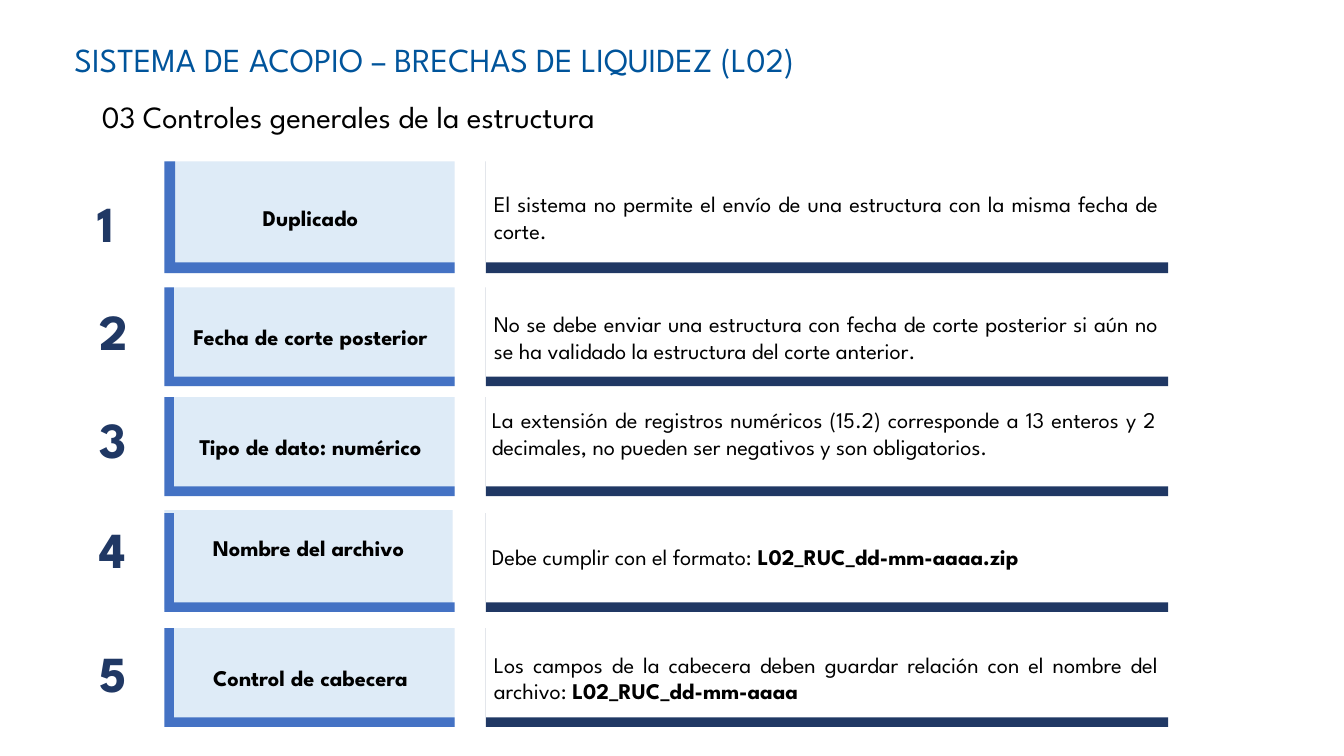
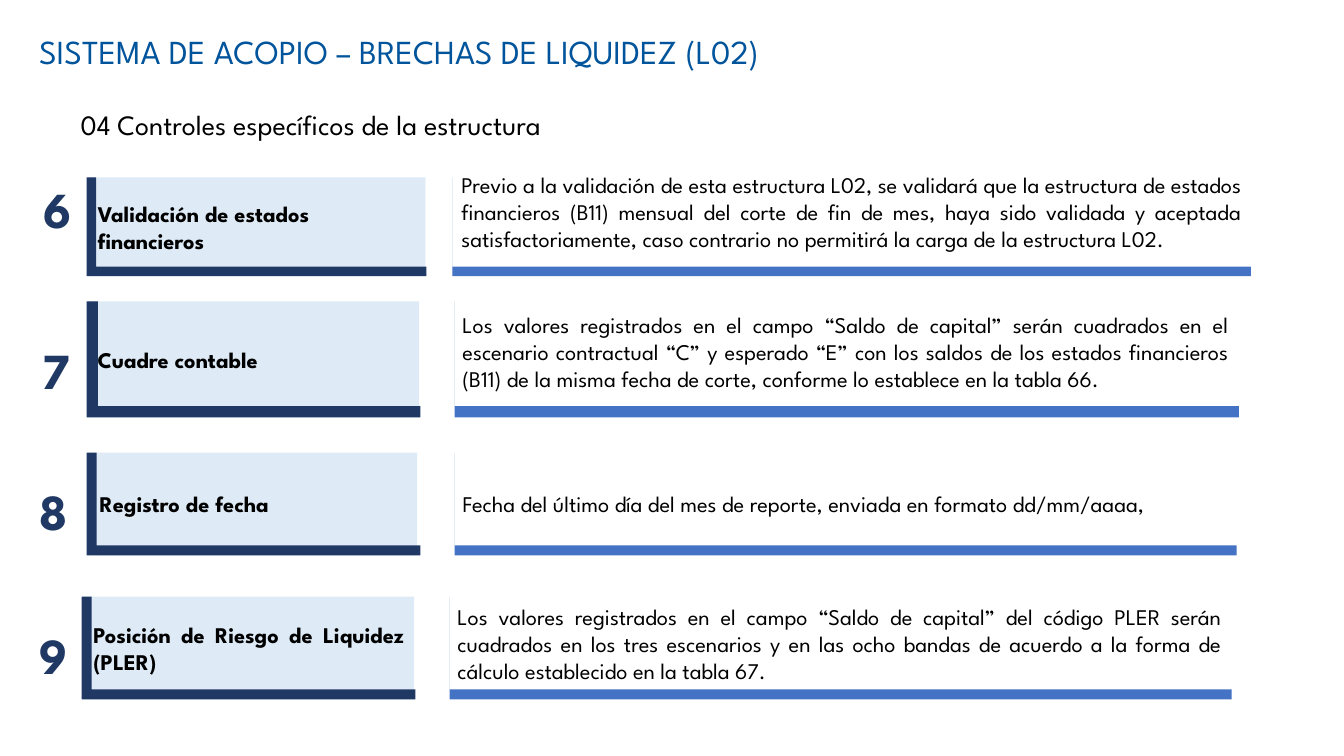
"""Build two slides on the controls of the liquidity gap structure."""
import dataclasses

import pptx
import pptx.dml.color
import pptx.enum.shapes
import pptx.enum.text
import pptx.util

Pt = pptx.util.Pt
Kind = pptx.enum.shapes.MSO_SHAPE
Align = pptx.enum.text.PP_ALIGN
Anchor = pptx.enum.text.MSO_ANCHOR
Fit = pptx.enum.text.MSO_AUTO_SIZE

FONT = "League Spartan"
TITLE = "SISTEMA DE ACOPIO – BRECHAS DE LIQUIDEZ (L02)"
BLACK, WHITE, PALE = "000000", "FFFFFF", "DEEBF7"
NAVY, BLUE, TITLE_BLUE = "203864", "4472C4", "00549B"
BAR = 0.097
EDGE = 1.4


@dataclasses.dataclass
class Row:
    """One numbered control: its box, its texts and its small offsets."""
    digit: str
    label: str
    text: str
    box: tuple
    mark: tuple
    strong: str = ""
    name: float = 207.4
    gap: float = 22.3
    tint: tuple = (EDGE, 0, 0)
    shift: tuple = (-EDGE, 0)
    anchor: int = Anchor.MIDDLE
    align: int = Align.CENTER
    foot: float = 3.6


def color(code):
    """Turn a hex string into a colour."""
    return pptx.dml.color.RGBColor.from_string(code)


def style(run, size, code, bold=False):
    """Set the font of a run."""
    run.font.name = FONT
    run.font.size = Pt(size)
    run.font.bold = bold
    run.font.color.rgb = color(code)


def write(frame, text, size, code, bold=False, align=Align.LEFT, strong=""):
    """Fill a text frame with one paragraph, ending in bold if asked."""
    frame.text = text
    para = frame.paragraphs[0]
    para.alignment = align
    style(para.runs[0], size, code, bold)
    if strong:
        run = para.add_run()
        run.text = strong
        style(run, size, code, True)


def block(slide, kind, box, code):
    """Add a plain filled shape."""
    shape = slide.shapes.add_shape(kind, *map(Pt, box))
    shape.shadow.inherit = False
    shape.fill.solid()
    shape.fill.fore_color.rgb = color(code)
    shape.line.fill.background()
    return shape


def corner(slide, box, code, side):
    """Add an L-shaped border with the given side thickness."""
    shape = block(slide, Kind.CORNER, box, code)
    shape.adjustments[0] = BAR
    shape.adjustments[1] = side


def note(slide, box, text, size, code, bold=False, wrap=True):
    """Add a text box and return its frame."""
    frame = slide.shapes.add_textbox(*map(Pt, box)).text_frame
    frame.word_wrap = wrap
    frame.auto_size = Fit.SHAPE_TO_FIT_TEXT
    write(frame, text, size, code, bold)
    return frame


def head(slide, spot, sub, place, size):
    """Place the title and the section heading."""
    note(slide, (*spot, 800, 36), TITLE, 24, TITLE_BLUE)
    frame = note(slide, (*place, 525.6, 40.3), sub, size, BLACK)
    frame.auto_size = Fit.NONE
    frame.margin_left = frame.margin_top = frame.margin_bottom = 0
    frame.margin_right = Pt(9.4)


def panel(slide, row, first, second):
    """Place one control inside its box."""
    left, top, wide, high = row.box
    start = left + row.name + row.gap
    span = wide - row.name - row.gap

    dx, dy = row.shift
    body = block(slide, Kind.RECTANGLE,
                 (start + dx, top + dy, span + EDGE, high), WHITE).text_frame
    body.word_wrap = True
    body.vertical_anchor = row.anchor
    write(body, row.text, 16, BLACK, align=Align.JUSTIFY, strong=row.strong)

    dx, dy, trim = row.tint
    label = block(slide, Kind.RECTANGLE,
                  (left + dx, top + dy, row.name - dx - trim, high),
                  PALE).text_frame
    label.word_wrap = True
    label.vertical_anchor = Anchor.MIDDLE
    label.margin_bottom = Pt(row.foot)
    write(label, row.label, 16, BLACK, True, row.align)

    corner(slide, (left, top, row.name, high), first, BAR)
    corner(slide, (start, top, span, high), second, 0)
    dx, dy = row.mark
    note(slide, (left + dx, top + dy, 34.6, 51.1), row.digit, 36, NAVY,
         True, False)


GENERAL = [
    Row("1", "Duplicado",
        "El sistema no permite el envío de una estructura con la misma "
        "fecha de corte.",
        (117.4, 115.2, 717.1, 79.9), (-54.7, 18.7)),
    Row("2", "Fecha de corte posterior",
        "No se debe enviar una estructura con fecha de corte posterior si "
        "aún no se ha validado la estructura del corte anterior.",
        (117.4, 205.2, 717.1, 70.6), (-53.3, 5.8)),
    Row("3", "Tipo de dato: numérico",
        "La extensión de registros numéricos (15.2) corresponde a 13 enteros "
        "y 2 decimales, no pueden ser negativos y son obligatorios.",
        (117.4, 283.7, 717.1, 70.6), (-53.3, 4.3),
        shift=(-2.9, 2.9), anchor=Anchor.TOP),
    Row("4", "Nombre del archivo", "Debe cumplir con el formato: ",
        (117.4, 366.5, 717.1, 70.6), (-53.3, 0),
        strong="L02_RUC_dd-mm-aaaa.zip",
        tint=(0, -2.2, EDGE), shift=(-2.9, -4.3), foot=20.6),
    Row("5", "Control de cabecera",
        "Los campos de la cabecera deben guardar relación con el nombre del "
        "archivo: ",
        (117.4, 448.6, 717.1, 70.6), (-53.3, 6.5),
        strong="L02_RUC_dd-mm-aaaa"),
]

SPECIFIC = [
    Row("6", "Validación de estados financieros",
        "Previo a la validación de esta estructura L02, se validará que la "
        "estructura de estados financieros (B11) mensual del corte de fin de "
        "mes, haya sido validada y aceptada satisfactoriamente, caso "
        "contrario no permitirá la carga de la estructura L02.",
        (61.9, 126.7, 831.6, 70.6), (-38.2, -2.9), name=242.6, gap=18.7,
        tint=(0.7, 0, 0.7), shift=(-0.7, -10.8), align=Align.LEFT),
    Row("7", "Cuadre contable",
        "Los valores registrados en el campo “Saldo de capital” serán "
        "cuadrados en el escenario contractual “C” y esperado “E” con los "
        "saldos de los estados financieros (B11) de la misma fecha de corte, "
        "conforme lo establece en la tabla 66.",
        (61.9, 215.3, 823, 82.8), (-38.9, 23.7), name=238.3, gap=24.5,
        tint=(0.7, 0, 0.7), shift=(-EDGE, -5.8), align=Align.JUSTIFY),
    Row("8", "Registro de fecha",
        "Fecha del último día del mes de reporte, enviada en formato "
        "dd/mm/aaaa,",
        (61.9, 323.3, 821.5, 73.4), (-41, 15.8), name=238.3, gap=24.5,
        tint=(2.2, 0, 2.2), align=Align.JUSTIFY),
    Row("9", "Posición de Riesgo de Liquidez (PLER)",
        "Los valores registrados en el campo “Saldo de capital” del código "
        "PLER serán cuadrados en los tres escenarios y en las ocho bandas de "
        "acuerdo a la forma de cálculo establecido en la tabla 67.",
        (58.3, 426.2, 821.5, 73.4), (-37.4, 15.9), name=238.3, gap=24.5,
        tint=(EDGE, 0, 0.7), shift=(-EDGE, EDGE), anchor=Anchor.TOP,
        align=Align.JUSTIFY),
]


def sheet(deck, heading, rows, first, second):
    """Add a slide with its headings and its list of controls."""
    slide = deck.slides.add_slide(deck.slide_layouts[6])
    for row in rows:
        panel(slide, row, first, second)
    head(slide, *heading)


def main():
    """Build and save the deck."""
    deck = pptx.Presentation()
    deck.slide_width, deck.slide_height = Pt(960), Pt(540)
    sheet(deck, ((46.1, 24.5), "03 Controles generales de la estructura",
                 (72.7, 69.8), 22), GENERAL, BLUE, NAVY)
    sheet(deck, ((20.9, 18.7), "04 Controles específicos de la estructura",
                 (57.6, 77), 20), SPECIFIC, NAVY, BLUE)
    deck.save("out.pptx")


if __name__ == "__main__":
    main()
